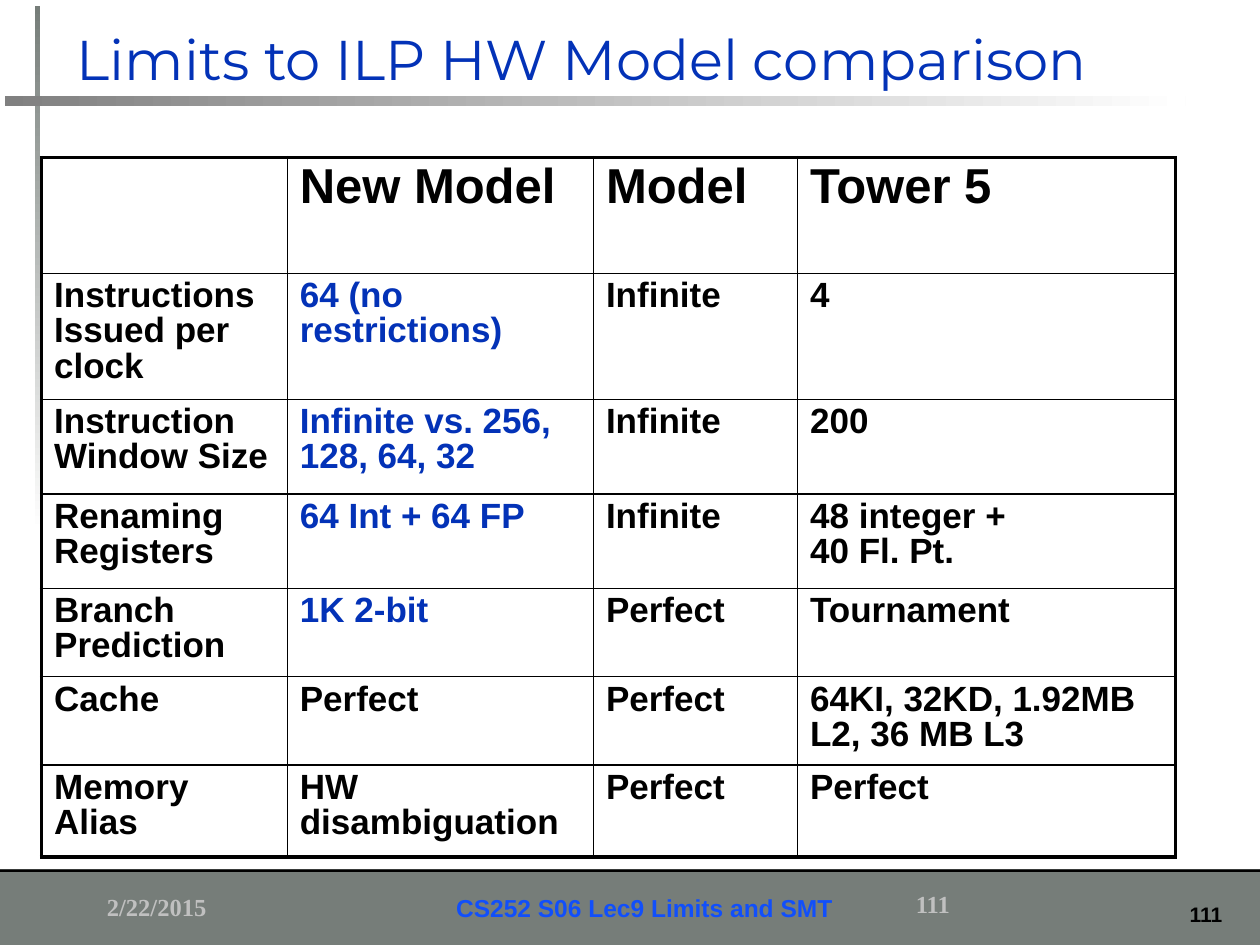
from lxml import etree
from pptx import Presentation
from pptx import util as u
from pptx.dml.color import RGBColor
from pptx.enum import shapes, text
from pptx.oxml.ns import qn

BLACK, WHITE, GRAY, SILVER, BLUE = "000000", "FFFFFF", "767D79", "C0C0C0", "0332B7"


def color(hex_value):
    return RGBColor.from_string(hex_value)


def write(frame, words, size=14, font="Arial", ink=BLACK, bold=True,
          align=text.PP_ALIGN.LEFT, anchor=text.MSO_ANCHOR.TOP, spacing=1.0):
    frame.word_wrap = True
    frame.vertical_anchor = anchor
    paragraph = frame.paragraphs[0]
    paragraph.text = words
    paragraph.alignment = align
    paragraph.line_spacing = spacing
    for run in paragraph.runs:
        run.font.size = u.Pt(size)
        run.font.name = font
        run.font.bold = bold
        run.font.color.rgb = color(ink)


deck = Presentation()
deck.slide_width, deck.slide_height = u.Inches(10), u.Inches(7.5)
slide = deck.slides.add_slide(deck.slide_layouts[5])

# Footer band, its top rule, and the two fading bars behind the title
bars = [
    (0, 6.9, 10, 0.6, GRAY, None),
    (0, 6.9, 10, 0.02, BLACK, None),
    (0.28, 0.05, 0.04, 4.17, GRAY, 270),
    (0.04, 0.76, 9.37, 0.08, "808080", 0),
]
for left, top, width, height, shade, angle in bars:
    bar = slide.shapes.add_shape(
        shapes.MSO_SHAPE.RECTANGLE,
        u.Inches(left), u.Inches(top), u.Inches(width), u.Inches(height))
    bar.shadow.inherit = False
    bar.line.fill.background()
    if angle is None:
        bar.fill.solid()
        bar.fill.fore_color.rgb = color(shade)
    else:
        bar.fill.gradient()
        bar.fill.gradient_angle = angle
        for stop, stop_color in zip(bar.fill.gradient_stops, (shade, WHITE)):
            stop.color.rgb = color(stop_color)

# Footer texts
serif = dict(font="Times New Roman", ink=SILVER)
footers = [
    ("111", 9.17, 7.11, 0.63, 0.3, dict(size=12, align=text.PP_ALIGN.RIGHT)),
    ("2/22/2015", 0.75, 7.03, 2.08, 0.31, serif),
    ("CS252 S06 Lec9 Limits and SMT", 1.14, 6.98, 7.95, 0.39,
     dict(ink="114FFB", align=text.PP_ALIGN.CENTER, anchor=text.MSO_ANCHOR.BOTTOM)),
    ("111", 7.17, 7.01, 2.08, 0.32, serif),
]
for words, left, top, width, height, look in footers:
    footer = slide.shapes.add_textbox(
        u.Inches(left), u.Inches(top), u.Inches(width), u.Inches(height))
    write(footer.text_frame, words, **look)

# Comparison table
models = [
    ["", "New Model", "Model", "Tower 5"],
    ["Instructions Issued per clock", "64 (no restrictions)", "Infinite", "4"],
    ["Instruction Window Size", "Infinite vs. 256, 128, 64, 32", "Infinite", "200"],
    ["Renaming Registers", "64 Int + 64 FP", "Infinite", "48 integer +\v40 Fl. Pt."],
    ["Branch Prediction", "1K 2-bit", "Perfect", "Tournament"],
    ["Cache", "Perfect", "Perfect", "64KI, 32KD, 1.92MB L2, 36 MB L3"],
    ["Memory Alias", "HW disambiguation", "Perfect", "Perfect"],
]
column_widths = [1.95, 2.43, 1.62, 3]
row_heights = [0.92, 1, 0.75, 0.75, 0.7, 0.7, 0.73]
last_row, last_column = len(row_heights) - 1, len(column_widths) - 1

comparison = slide.shapes.add_table(
    len(row_heights), len(column_widths),
    u.Inches(0.33), u.Inches(1.25), u.Inches(9), u.Inches(5.55)).table
comparison.first_row = comparison.horz_banding = False
for column, width in zip(comparison.columns, column_widths):
    column.width = u.Inches(width)
for row, height in zip(comparison.rows, row_heights):
    row.height = u.Inches(height)

for r, values in enumerate(models):
    for c, value in enumerate(values):
        cell = comparison.cell(r, c)
        outer_edges = {"lnL": c == 0, "lnR": c == last_column,
                       "lnT": r == 0, "lnB": r == last_row}
        properties = cell._tc.get_or_add_tcPr()
        for edge, is_outer in outer_edges.items():
            border = etree.SubElement(properties, qn(f"a:{edge}"),
                                      w=str(u.Pt(2.25 if is_outer else 1)))
            fill = etree.SubElement(border, qn("a:solidFill"))
            etree.SubElement(fill, qn("a:srgbClr"), val=BLACK)
        cell.fill.solid()
        cell.fill.fore_color.rgb = color(WHITE)
        if value:
            is_limit = c == 1 and 1 <= r <= 4
            write(cell.text_frame, value, size=28 if r == 0 else 20,
                  ink=BLUE if is_limit else BLACK, spacing=0.9)

# Title
title = slide.shapes.title
title.left, title.top = u.Inches(0.51), u.Inches(0)
title.width, title.height = u.Inches(9.29), u.Inches(0.99)
title.text_frame.auto_size = text.MSO_AUTO_SIZE.NONE
write(title.text_frame, "Limits to ILP HW Model comparison", size=32, font="Montserrat",
      ink=BLUE, bold=False, anchor=text.MSO_ANCHOR.MIDDLE, spacing=0.9)

deck.save("out.pptx")
